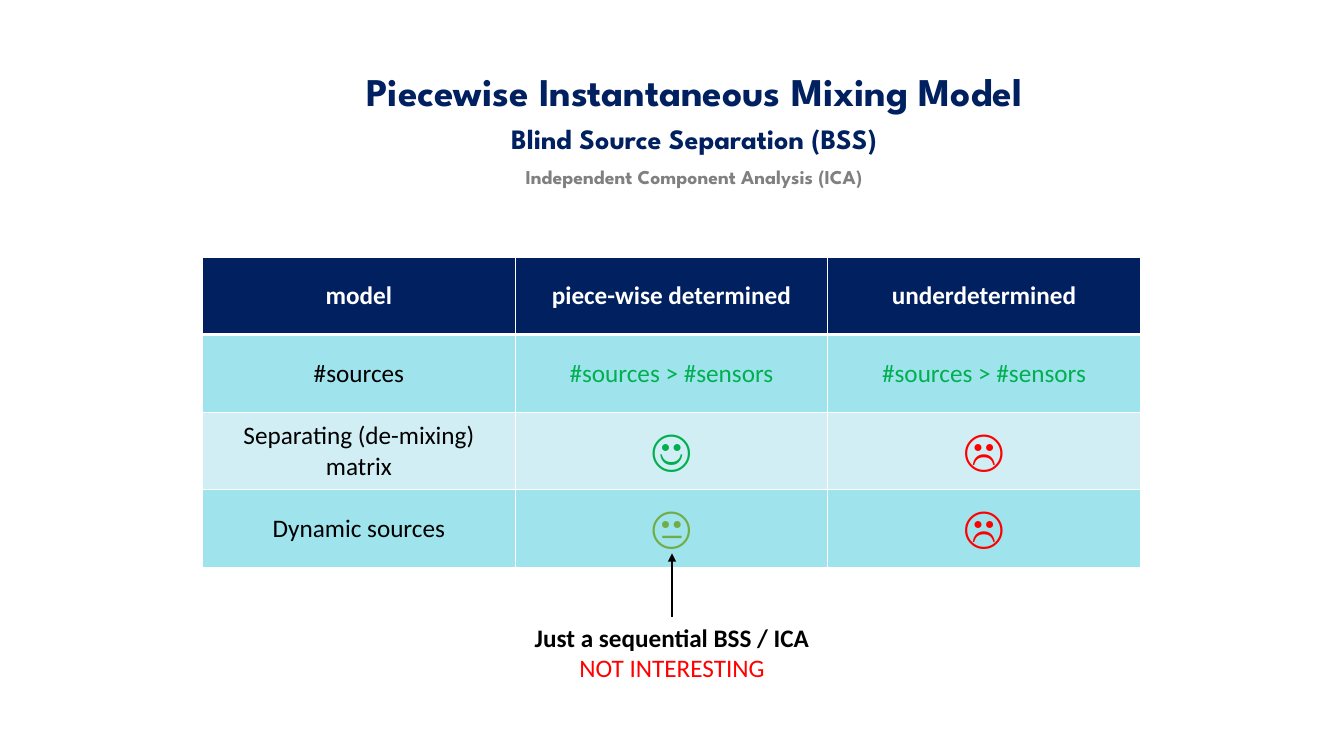
import pptx
import pptx.util
import pptx.dml.color
import pptx.enum.text
import pptx.enum.shapes
import pptx.oxml
import pptx.oxml.ns

THEME = {
    "navy": "002060", "gray": "808080", "white": "FFFFFF", "black": "000000",
    "green": "00B050", "olive": "70AD47", "red": "FF0000",
    "band_dark": "9FE3EC", "band_light": "D1EEF4",
    "heading_font": "League Spartan", "body_font": "Calibri",
    "title": 28, "subtitle": 20, "detail": 14, "body": 18, "face": 32,
}

HEADINGS = [
    ("Piecewise Instantaneous Mixing Model", "title", "navy"),
    ("Blind Source Separation (BSS)", "subtitle", "navy"),
    ("Independent Component Analysis (ICA)", "detail", "gray"),
]
COMPARISON = [
    [("model", "body", "white"), ("piece-wise determined", "body", "white"),
     ("underdetermined", "body", "white")],
    [("#sources", "body", "black"), ("#sources > #sensors", "body", "green"),
     ("#sources > #sensors", "body", "green")],
    [("Separating (de-mixing)\nmatrix", "body", "black"), ("☺", "face", "green"),
     ("☹", "face", "red")],
    [("Dynamic sources", "body", "black"), ("😐", "face", "olive"),
     ("☹", "face", "red")],
]
REMARK = [
    ("Just a sequential BSS / ICA", "body", "black", True),
    ("NOT INTERESTING", "body", "red", False),
]

inch = pptx.util.Inches
WIDTH, HEIGHT = 13.33, 7.5
COLUMN, ROW = 3.1, 0.77
TABLE_LEFT, TABLE_TOP = 2.01, 2.55
REMARK_TOP, ARROW_TIP = 6.12, 5.49


def color(name):
    return pptx.dml.color.RGBColor.from_string(THEME[name])


def style(paragraph, text, size, ink, font, bold):
    paragraph.text = text
    paragraph.alignment = pptx.enum.text.PP_ALIGN.CENTER
    paragraph.font.name = THEME[font]
    paragraph.font.size = pptx.util.Pt(THEME[size])
    paragraph.font.bold = bold
    paragraph.font.color.rgb = color(ink)


def next_paragraph(frame, index):
    return frame.add_paragraph() if index else frame.paragraphs[0]


def add_text(slide, left, top, width, height):
    box = slide.shapes.add_textbox(inch(left), inch(top), inch(width), inch(height))
    box.text_frame.word_wrap = True
    return box


def add_borders(cell, bottom):
    properties = cell._tc.get_or_add_tcPr()
    for place, (side, points) in enumerate(
            [("lnL", 1), ("lnR", 1), ("lnT", 1), ("lnB", bottom)]):
        properties.insert(place, pptx.oxml.parse_xml(
            f'<a:{side} {pptx.oxml.ns.nsdecls("a")} w="{pptx.util.Pt(points)}">'
            f'<a:solidFill><a:srgbClr val="{THEME["white"]}"/></a:solidFill></a:{side}>'))


def add_headings(slide):
    frame = add_text(slide, 2.32, 0.71, 9.13, 1.27).text_frame
    for index, (text, size, ink) in enumerate(HEADINGS):
        paragraph = next_paragraph(frame, index)
        style(paragraph, text, size, ink, "heading_font", True)
        paragraph.line_spacing = 0.8
        paragraph.space_before = pptx.util.Pt(10)


def add_comparison(slide):
    rows, columns = len(COMPARISON), len(COMPARISON[0])
    table = slide.shapes.add_table(
        rows, columns, inch(TABLE_LEFT), inch(TABLE_TOP),
        inch(columns * COLUMN), inch(rows * ROW)).table
    for row, entries in enumerate(COMPARISON):
        header = row == 0
        band = "navy" if header else "band_dark" if row % 2 else "band_light"
        for column, (text, size, ink) in enumerate(entries):
            cell = table.cell(row, column)
            cell.vertical_anchor = pptx.enum.text.MSO_ANCHOR.MIDDLE
            cell.fill.solid()
            cell.fill.fore_color.rgb = color(band)
            add_borders(cell, 3 if header else 1)
            for index, line in enumerate(text.split("\n")):
                style(next_paragraph(cell.text_frame, index), line, size, ink,
                      "body_font", header)


def add_remark(slide):
    remark = add_text(slide, WIDTH / 4, REMARK_TOP, WIDTH / 2, 0.71)
    remark.text_frame.auto_size = pptx.enum.text.MSO_AUTO_SIZE.SHAPE_TO_FIT_TEXT
    for index, (text, size, ink, bold) in enumerate(REMARK):
        style(next_paragraph(remark.text_frame, index), text, size, ink,
              "body_font", bold)
    arrow = slide.shapes.add_connector(
        pptx.enum.shapes.MSO_CONNECTOR.STRAIGHT,
        inch(WIDTH / 2), inch(REMARK_TOP), inch(WIDTH / 2), inch(ARROW_TIP))
    arrow.begin_connect(remark, 0)
    arrow.line.color.rgb = color("black")
    arrow.line.width = pptx.util.Pt(1.5)
    namespace = pptx.oxml.ns.nsdecls("a")
    arrow.line._get_or_add_ln().append(
        pptx.oxml.parse_xml(f'<a:tailEnd {namespace} type="triangle"/>'))
    arrow._element.spPr.append(pptx.oxml.parse_xml(f"<a:effectLst {namespace}/>"))


def main():
    deck = pptx.Presentation()
    deck.slide_width, deck.slide_height = inch(WIDTH), inch(HEIGHT)
    slide = deck.slides.add_slide(deck.slide_layouts[6])
    add_headings(slide)
    add_comparison(slide)
    add_remark(slide)
    deck.save("out.pptx")


if __name__ == "__main__":
    main()
